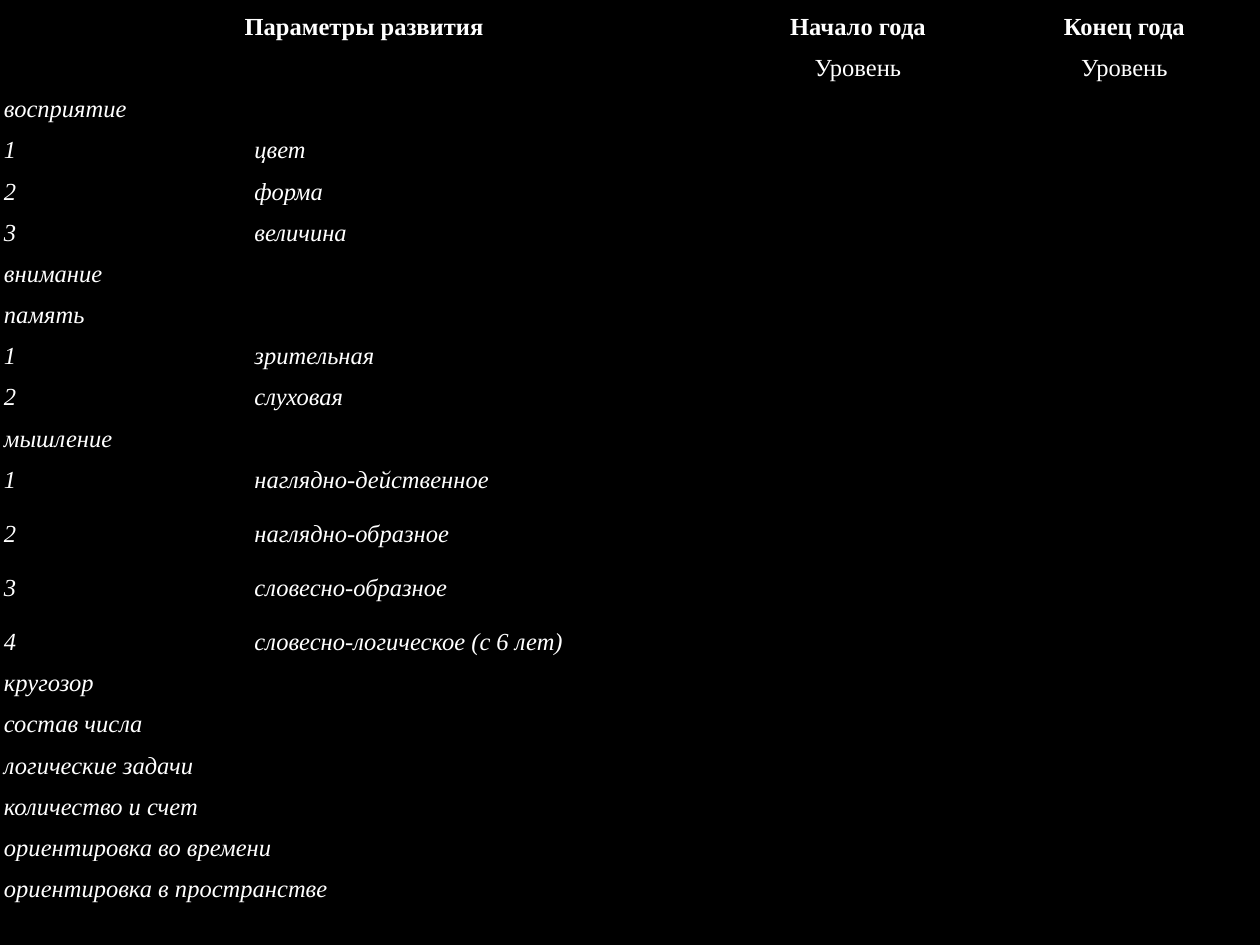
from lxml import etree
from pptx import Presentation
from pptx.dml.color import RGBColor
from pptx.enum.text import PP_ALIGN
from pptx.oxml.ns import qn
from pptx.util import Cm, Pt

MID, JUST, LEFT = PP_ALIGN.CENTER, PP_ALIGN.JUSTIFY, PP_ALIGN.LEFT

# Content: heading, then groups with their numbered items
HEAD = "Параметры развития"
TERMS = ["Начало года", "Конец года"]
LEVEL = "Уровень"
GROUPS = [
    ("восприятие", ["цвет", "форма", "величина"]),
    ("внимание", []),
    ("память", ["зрительная", "слуховая"]),
    ("мышление", ["наглядно-действенное", "наглядно-образное",
                  "словесно-образное", "словесно-логическое (c 6 лет)"]),
    ("кругозор", []),
    ("состав числа", []),
    ("логические задачи", []),
    ("количество и счет", []),
    ("ориентировка во времени", []),
    ("ориентировка в пространстве", []),
]

THEME = {"font": "Times New Roman", "size": Pt(14), "line": Pt(1),
         "ink": RGBColor(255, 255, 255), "back": RGBColor(0, 0, 0)}
COLS = [5.05, 9.63, 5.23, 5.51]
ROW, TALL, LAST = 0.83, 1.09, 0.99
TALL_ROWS = range(11, 14)
PAD = Cm(0.08)


def put(cell, text, align, bold=False, italic=False):
    para = cell.text_frame.paragraphs[0]
    para.text = text
    para.alignment = align
    para.line_spacing = 1.5
    font = para.runs[0].font
    font.name, font.size = THEME["font"], THEME["size"]
    font.bold, font.italic = bold, italic
    font.color.rgb = THEME["ink"]


def frame(cell):
    cell.margin_left = cell.margin_right = PAD
    cell.margin_top = cell.margin_bottom = 0
    props = cell._tc.get_or_add_tcPr()
    for side in ("a:lnL", "a:lnR", "a:lnT", "a:lnB"):
        line = etree.SubElement(props, qn(side), w=str(THEME["line"]))
        fill = etree.SubElement(line, qn("a:solidFill"))
        etree.SubElement(fill, qn("a:srgbClr"), val=str(THEME["back"]))
    cell.fill.background()


# Slide
prs = Presentation()
prs.slide_width, prs.slide_height = Cm(25.4), Cm(19.05)
slide = prs.slides.add_slide(prs.slide_layouts[6])
back = slide.background.fill
back.solid()
back.fore_color.rgb = THEME["back"]

# Empty grid
count = 2 + sum(1 + len(items) for _, items in GROUPS)
highs = [TALL if i in TALL_ROWS else ROW for i in range(count)]
highs[-1] = LAST
grid = slide.shapes.add_table(count, len(COLS), 0, 0,
                              Cm(sum(COLS)), Cm(sum(highs))).table
grid.first_row = grid.horz_banding = False
for col, wide in zip(grid.columns, COLS):
    col.width = Cm(wide)
for row, high in zip(grid.rows, highs):
    row.height = Cm(high)
for cell in grid.iter_cells():
    frame(cell)

# Heading rows
grid.cell(0, 0).merge(grid.cell(1, 1))
put(grid.cell(0, 0), HEAD, MID, bold=True)
for col, term in enumerate(TERMS, 2):
    put(grid.cell(0, col), term, MID, bold=True)
    put(grid.cell(1, col), LEVEL, MID)

# Groups and items
row = 2
for name, items in GROUPS:
    grid.cell(row, 0).merge(grid.cell(row, 1))
    align = LEFT if row == count - 1 else JUST
    put(grid.cell(row, 0), name, align, italic=True)
    for num, item in enumerate(items, 1):
        put(grid.cell(row + num, 0), str(num), JUST, italic=True)
        put(grid.cell(row + num, 1), item, JUST, italic=True)
    row += 1 + len(items)

prs.save("out.pptx")
